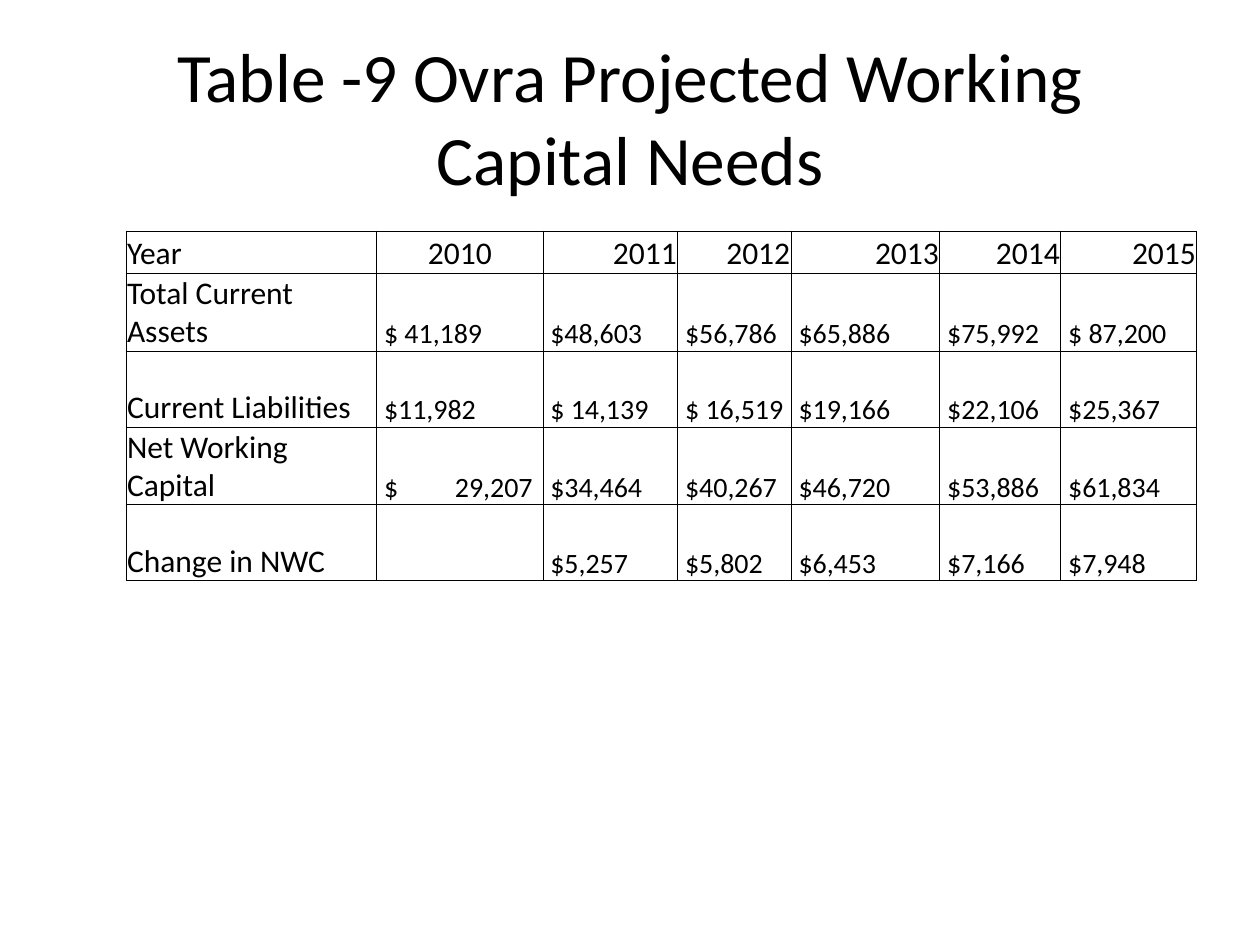
"""Build a slide with a table of projected working capital needs."""
from typing import NamedTuple

from lxml import etree
from pptx import Presentation
from pptx.dml.color import RGBColor
from pptx.enum.text import MSO_ANCHOR, PP_ALIGN
from pptx.oxml.ns import qn
from pptx.util import Pt

LEFT, CENTER, RIGHT = PP_ALIGN.LEFT, PP_ALIGN.CENTER, PP_ALIGN.RIGHT
MIDDLE, BOTTOM = MSO_ANCHOR.MIDDLE, MSO_ANCHOR.BOTTOM
BLACK = RGBColor(0x00, 0x00, 0x00)
FONT = "Calibri"
LABEL_SIZE, AMOUNT_SIZE = 18, 16
CELL_MARGIN, AMOUNT_INDENT = 0.6, 4.2
AMOUNT_TAB = 40.5
BORDER_WIDTH = 0.5
COLUMN_WIDTHS = (143.28, 95.04, 77.04, 64.8, 84.96, 69.12, 77.76)
HEADER_HEIGHT, ROW_HEIGHT = 24, 43.4


class Row(NamedTuple):
    label: str
    amounts: tuple[str, ...]


YEARS = ("2010", "2011", "2012", "2013", "2014", "2015")
ROWS = (
    Row("Total Current Assets",
        ("$ 41,189", "$48,603", "$56,786", "$65,886", "$75,992", "$ 87,200")),
    Row("Current Liabilities",
        ("$11,982", "$ 14,139", "$ 16,519", "$19,166", "$22,106", "$25,367")),
    Row("Net Working Capital",
        ("$\t29,207", "$34,464", "$40,267", "$46,720", "$53,886", "$61,834")),
    Row("Change in NWC",
        ("", "$5,257", "$5,802", "$6,453", "$7,166", "$7,948")),
)


def write_text(text_frame, text: str, *, size: float, align=LEFT) -> None:
    """Write one formatted paragraph."""
    paragraph = text_frame.paragraphs[0]
    paragraph.alignment = align
    paragraph.font.size = Pt(size)
    if "\t" in text:
        tabs = etree.Element(qn("a:tabLst"))
        etree.SubElement(tabs, qn("a:tab"), pos=str(Pt(AMOUNT_TAB)), algn="l")
        paragraph._p.get_or_add_pPr().insert(0, tabs)
    if text:
        run = paragraph.add_run()
        run.text = text
        run.font.name = FONT
        run.font.size = Pt(size)
        run.font.color.rgb = BLACK


def add_borders(cell) -> None:
    """Draw a thin line on each side of a cell."""
    properties = cell._tc.get_or_add_tcPr()
    for index, side in enumerate(("lnL", "lnR", "lnT", "lnB")):
        line = etree.Element(qn(f"a:{side}"), w=str(Pt(BORDER_WIDTH)))
        fill = etree.SubElement(line, qn("a:solidFill"))
        etree.SubElement(fill, qn("a:srgbClr"), val=str(BLACK))
        properties.insert(index, line)


def fill_cell(cell, text: str, *, size: float, align=LEFT, indent: float = CELL_MARGIN) -> None:
    """Format a cell and write its text."""
    cell.fill.background()
    cell.vertical_anchor = BOTTOM
    cell.margin_left = Pt(indent)
    cell.margin_right = cell.margin_top = Pt(CELL_MARGIN)
    cell.margin_bottom = Pt(0)
    add_borders(cell)
    write_text(cell.text_frame, text, size=size, align=align)


def add_title(slide, text: str) -> None:
    """Place and write the slide title."""
    title = slide.shapes.title
    title.left, title.top, title.width, title.height = Pt(36), Pt(21.6), Pt(648), Pt(90)
    title.text_frame.word_wrap = True
    title.text_frame.vertical_anchor = MIDDLE
    write_text(title.text_frame, text, size=39.6, align=CENTER)


def add_capital_table(slide) -> None:
    """Add the working capital table."""
    height = HEADER_HEIGHT + ROW_HEIGHT * len(ROWS)
    table = slide.shapes.add_table(
        len(ROWS) + 1, len(COLUMN_WIDTHS), Pt(72), Pt(132),
        Pt(sum(COLUMN_WIDTHS)), Pt(height)).table
    table.first_row = table.horz_banding = False
    for column, width in zip(table.columns, COLUMN_WIDTHS):
        column.width = Pt(width)
    for index, table_row in enumerate(table.rows):
        table_row.height = Pt(ROW_HEIGHT if index else HEADER_HEIGHT)

    fill_cell(table.cell(0, 0), "Year", size=LABEL_SIZE)
    for column, year in enumerate(YEARS, start=1):
        align = CENTER if column == 1 else RIGHT
        fill_cell(table.cell(0, column), year, size=LABEL_SIZE, align=align)
    for index, row in enumerate(ROWS, start=1):
        fill_cell(table.cell(index, 0), row.label, size=LABEL_SIZE)
        for column, amount in enumerate(row.amounts, start=1):
            fill_cell(table.cell(index, column), amount,
                      size=AMOUNT_SIZE, indent=AMOUNT_INDENT)


def main() -> None:
    """Create and save the presentation."""
    presentation = Presentation()
    presentation.slide_width, presentation.slide_height = Pt(720), Pt(540)
    slide = presentation.slides.add_slide(presentation.slide_layouts[5])
    add_title(slide, "Table -9 Ovra Projected Working Capital Needs")
    add_capital_table(slide)
    presentation.save("out.pptx")


if __name__ == "__main__":
    main()
